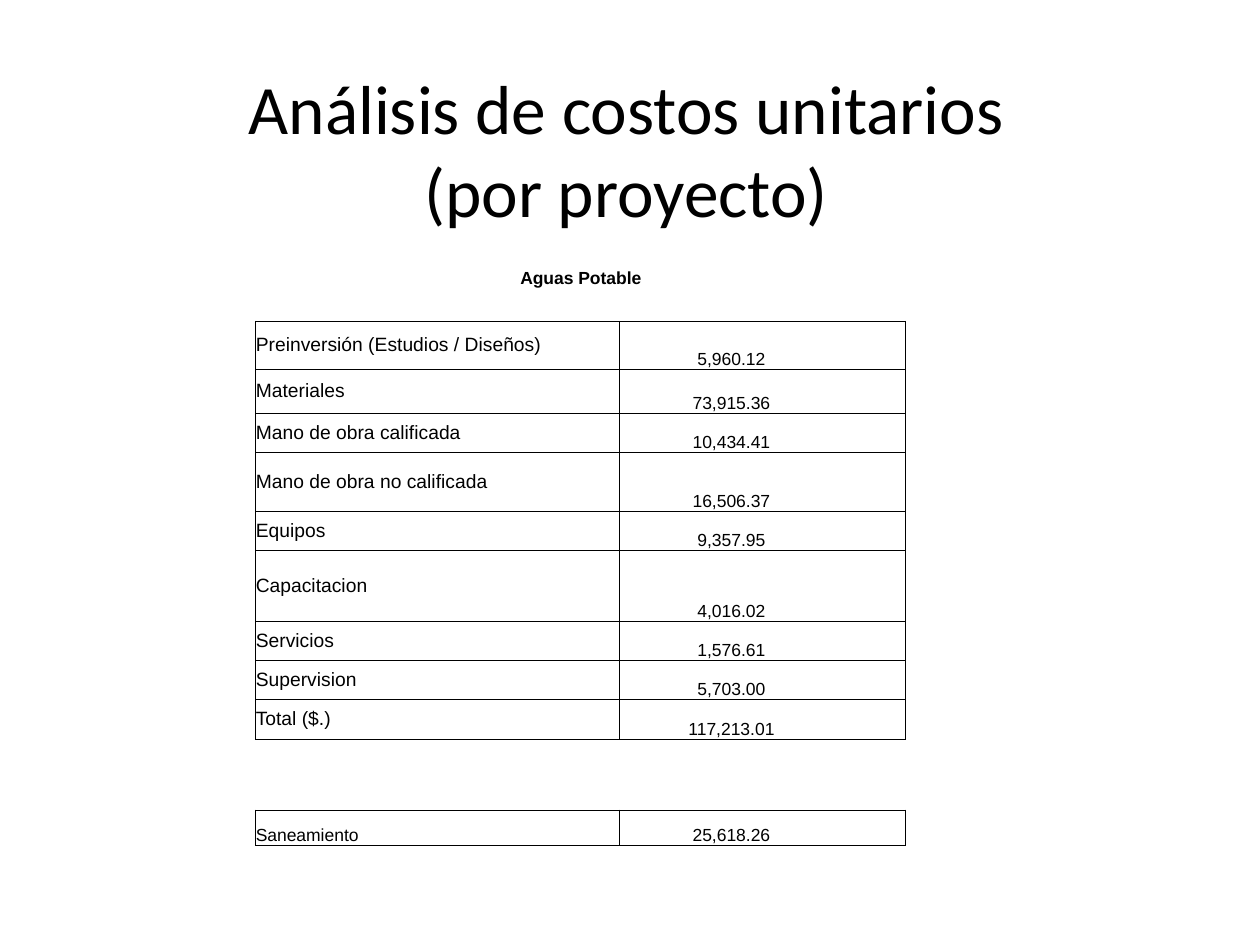
from lxml import etree
from pptx import Presentation
from pptx.dml.color import RGBColor
from pptx.enum.text import MSO_ANCHOR, MSO_AUTO_SIZE, PP_ALIGN
from pptx.oxml.ns import qn
from pptx.util import Inches, Pt

BLACK = RGBColor(0x00, 0x00, 0x00)
NO_GRID_STYLE = "{2D5ABB26-0587-4C30-8999-92F81FD0307C}"
COLUMN_WIDTHS = (2.89, 2.27)
HEADING_HEIGHT = 0.68
GAP_ROWS = 2
SMALL_ROW_HEIGHT = 0.28
WATER_COSTS = [
    ("Preinversión (Estudios / Diseños)", "5,960.12", 0.38),
    ("Materiales", "73,915.36", 0.35),
    ("Mano de obra calificada", "10,434.41", 0.31),
    ("Mano de obra no calificada", "16,506.37", 0.47),
    ("Equipos", "9,357.95", 0.31),
    ("Capacitacion", "4,016.02", 0.56),
    ("Servicios", "1,576.61", 0.31),
    ("Supervision", "5,703.00", 0.31),
    ("Total ($.)", "117,213.01", 0.32),
]
SANITATION_COST = ("Saneamiento", "25,618.26")


def add_title(slide, left, top, width, height):
    title = slide.shapes.title
    title.left, title.top = Inches(left), Inches(top)
    title.width, title.height = Inches(width), Inches(height)
    frame = title.text_frame
    frame.text = "Análisis de costos unitarios\v(por proyecto)"
    frame.auto_size = MSO_AUTO_SIZE.NONE
    frame.vertical_anchor = MSO_ANCHOR.MIDDLE
    paragraph = frame.paragraphs[0]
    paragraph.alignment = PP_ALIGN.CENTER
    paragraph.font.name = "Calibri"
    paragraph.font.size = Pt(39.6)
    paragraph.font.color.rgb = BLACK


def add_borders(cell):
    properties = cell._tc.get_or_add_tcPr()
    for index, side in enumerate(("lnL", "lnR", "lnT", "lnB")):
        line = etree.Element(qn(f"a:{side}"), w=str(Pt(0.5)))
        fill = etree.SubElement(line, qn("a:solidFill"))
        etree.SubElement(fill, qn("a:srgbClr"), val=str(BLACK))
        properties.insert(index, line)


def format_cell(cell, text="", size=10, anchor=MSO_ANCHOR.BOTTOM,
                alignment=PP_ALIGN.LEFT, bold=False):
    cell.margin_left = cell.margin_right = 0
    cell.margin_top = cell.margin_bottom = 0
    cell.vertical_anchor = anchor
    cell.fill.background()
    cell.text = text
    paragraph = cell.text_frame.paragraphs[0]
    paragraph.alignment = alignment
    paragraph.font.name = "Arial"
    paragraph.font.size = Pt(size)
    paragraph.font.bold = bold
    paragraph.font.color.rgb = BLACK


def fill_cost_row(table, row, label, value, size, anchor):
    label_cell, value_cell = table.cell(row, 0), table.cell(row, 1)
    format_cell(label_cell, label, size, anchor)
    format_cell(value_cell, value, alignment=PP_ALIGN.CENTER)
    value_cell.margin_right = Inches(0.5)
    add_borders(label_cell)
    add_borders(value_cell)


def add_cost_table(slide, left, top):
    heights = [HEADING_HEIGHT, *(height for _, _, height in WATER_COSTS)]
    heights += [SMALL_ROW_HEIGHT] * (GAP_ROWS + 1)
    table = slide.shapes.add_table(
        len(heights), len(COLUMN_WIDTHS), Inches(left), Inches(top),
        Inches(sum(COLUMN_WIDTHS)), Inches(sum(heights))).table
    table.first_row = table.horz_banding = False
    table._tbl.tblPr.find(qn("a:tableStyleId")).text = NO_GRID_STYLE
    for column, width in zip(table.columns, COLUMN_WIDTHS):
        column.width = Inches(width)
    for row, height in zip(table.rows, heights):
        row.height = Inches(height)

    heading = table.cell(0, 0)
    heading.merge(table.cell(0, 1))
    format_cell(heading, "Aguas Potable", anchor=MSO_ANCHOR.MIDDLE,
                alignment=PP_ALIGN.CENTER, bold=True)
    for row, (label, value, _) in enumerate(WATER_COSTS, start=1):
        fill_cost_row(table, row, label, value, 11, MSO_ANCHOR.MIDDLE)
    last_row = len(heights) - 1
    for row in range(last_row - GAP_ROWS, last_row):
        for column in range(len(COLUMN_WIDTHS)):
            format_cell(table.cell(row, column))
    fill_cost_row(table, last_row, *SANITATION_COST, 10, MSO_ANCHOR.BOTTOM)


def main():
    presentation = Presentation()
    presentation.slide_width = Inches(10)
    presentation.slide_height = Inches(7.5)
    slide = presentation.slides.add_slide(presentation.slide_layouts[5])
    add_title(slide, 0.47, 0.55, 9, 1.25)
    add_cost_table(slide, 2.03, 1.87)
    presentation.save("out.pptx")


if __name__ == "__main__":
    main()
